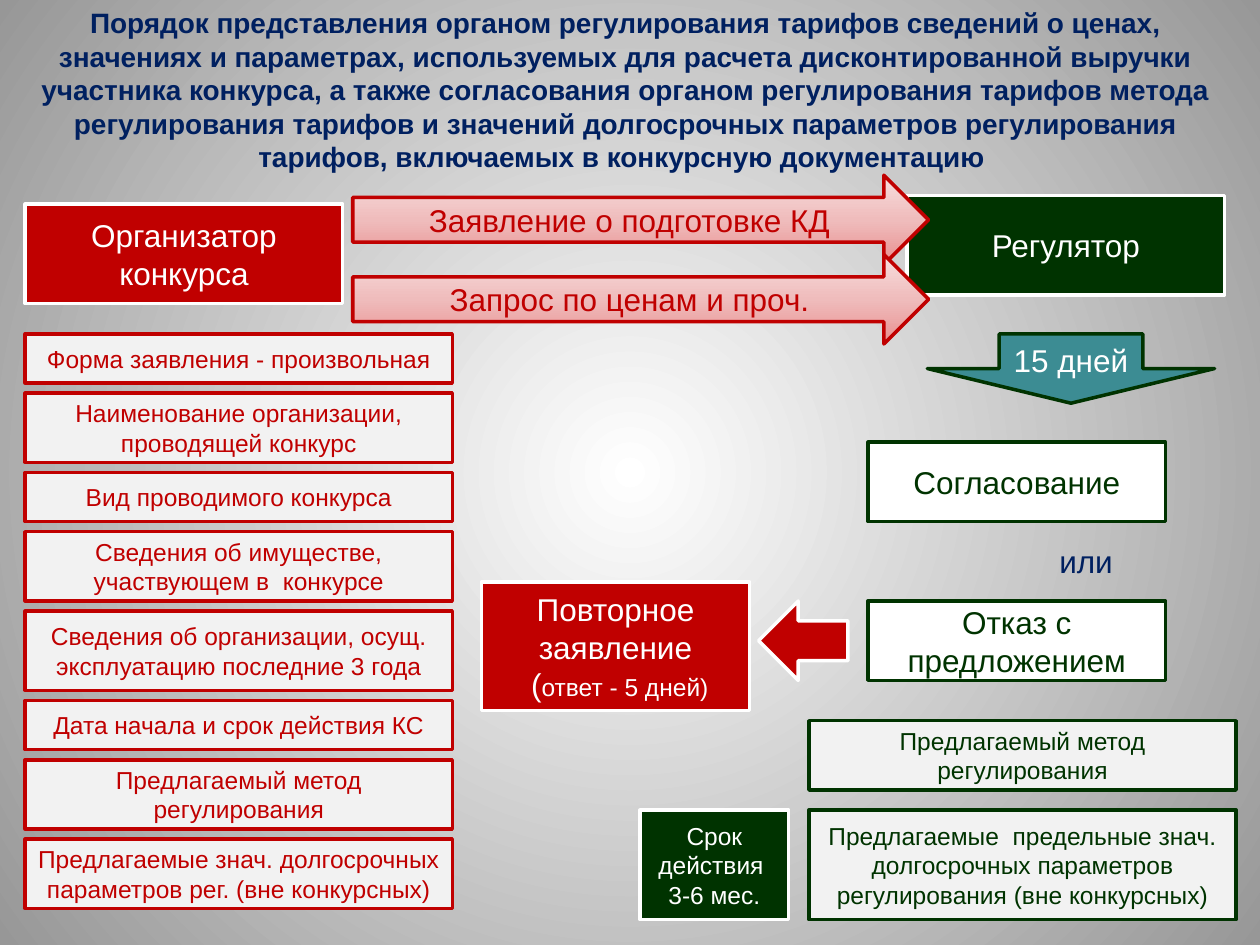
from copy import deepcopy

from lxml import etree
from pptx import Presentation
from pptx.dml.color import RGBColor
from pptx.enum.shapes import MSO_SHAPE
from pptx.enum.text import MSO_ANCHOR, PP_ALIGN
from pptx.oxml.ns import qn
from pptx.util import Emu, Pt

RECTANGLE = MSO_SHAPE.RECTANGLE
RIGHT_ARROW = MSO_SHAPE.RIGHT_ARROW
LEFT_ARROW_ROTATION = 180
DOWN_ARROW = MSO_SHAPE.DOWN_ARROW
CENTER = PP_ALIGN.CENTER
MIDDLE = MSO_ANCHOR.MIDDLE

EMU_PER_PX = 9144
COLORS = {
    "red": "C00000",
    "green": "003300",
    "navy": "002060",
    "teal": "3C8C93",
    "white": "FFFFFF",
    "pale": "F2F2F2",
    "gray": "979797",
    "rose_dark": "E98F8F",
    "rose": "EFBCBC",
    "rose_light": "F7DEDE",
}
ORGANIZER_STYLE = {"fill": "red", "line": "white", "color": "white"}
REGULATOR_STYLE = {"fill": "green", "line": "white", "color": "white"}
DECISION_STYLE = {"fill": "white", "line": "green", "color": "green"}
REQUEST_STYLE = {"fill": None, "line": "red", "color": "red"}
APPLICATION_STYLE = {"fill": "pale", "line": "red", "color": "red", "size": 14}
PROPOSAL_STYLE = {"fill": "pale", "line": "green", "color": "green", "size": 14}

TITLE = (
    "Порядок представления органом регулирования тарифов сведений о ценах, "
    "значениях и параметрах, используемых для расчета дисконтированной выручки "
    "участника конкурса, а также согласования органом регулирования тарифов метода "
    "регулирования тарифов и значений долгосрочных параметров регулирования "
    "тарифов, включаемых в конкурсную документацию "
)
APPLICATION_ITEMS = [
    ("Форма заявления - произвольная", 39),
    ("Наименование организации, проводящей конкурс", 55),
    ("Вид проводимого конкурса", 39),
    ("Сведения об имуществе, участвующем в  конкурсе", 55),
    ("Сведения об организации, осущ. эксплуатацию последние 3 года", 63),
    ("Дата начала и срок действия КС", 39),
    ("Предлагаемый метод регулирования", 55),
    ("Предлагаемые знач. долгосрочных параметров рег. (вне конкурсных)", 55),
]


def px(length):
    """Turn px into EMU."""
    return Emu(length * EMU_PER_PX)


def rgb(name):
    """Return the named colour."""
    return RGBColor.from_string(COLORS[name])


def add_run(paragraph, text, size=18, color="navy", bold=False):
    """Add one formatted run to a paragraph."""
    run = paragraph.add_run()
    run.text = text
    run.font.name = "Arial"
    run.font.size = Pt(size)
    run.font.bold = bold
    run.font.color.rgb = rgb(color)


def write_text(shape, text, **font):
    """Write centred text, one paragraph for each line."""
    frame = shape.text_frame
    frame.word_wrap = True
    frame.vertical_anchor = MIDDLE
    for index, line in enumerate(text.split("\n")):
        paragraph = frame.paragraphs[0] if index == 0 else frame.add_paragraph()
        paragraph.alignment = CENTER
        add_run(paragraph, line, **font)


def set_stops(fill, element, names):
    """Give a fill evenly spaced gradient stops and return its XML element."""
    fill.gradient()
    gradient = element.find(".//" + qn("a:gradFill"))
    stop_list = gradient.find(qn("a:gsLst"))
    while len(stop_list) < len(names):
        stop_list.append(deepcopy(stop_list[-1]))
    for index, (stop, name) in enumerate(zip(fill.gradient_stops, names)):
        stop.position = index / (len(names) - 1)
        stop.color.rgb = rgb(name)
    return gradient


def add_box(slide, box, text="", kind=RECTANGLE, fill="white", line="white",
            color="white", size=18):
    """Add an outlined shape, with a rose gradient if no fill is named."""
    shape = slide.shapes.add_shape(kind, *map(px, box))
    shape.shadow.inherit = False
    shape.line.color.rgb = rgb(line)
    shape.line.width = Pt(2)
    if fill:
        shape.fill.solid()
        shape.fill.fore_color.rgb = rgb(fill)
    else:
        set_stops(shape.fill, shape._element, ["rose_dark", "rose", "rose_light"])
        shape.fill.gradient_angle = 90
    if text:
        write_text(shape, text, color=color, size=size)
    return shape


def add_label(slide, box, text, **font):
    """Add a text box."""
    write_text(slide.shapes.add_textbox(*map(px, box)), text, **font)


def paint_background(slide):
    """Fill the background with a circular gradient."""
    gradient = set_stops(slide.background.fill, slide._element, ["white", "gray"])
    gradient.remove(gradient.find(qn("a:lin")))
    circle = etree.SubElement(gradient, qn("a:path"), {"path": "circle"})
    sides = dict.fromkeys("ltrb", "50000")
    etree.SubElement(circle, qn("a:fillToRect"), sides)


def add_parties(slide, left, top, width):
    """Place the organizer, the regulator and the requests between them."""
    add_box(slide, (left, top + 23, 252, 79), "Организатор конкурса", **ORGANIZER_STYLE)
    add_box(slide, (left + width - 252, top + 16, 252, 79), "Регулятор", **REGULATOR_STYLE)
    for index, text in enumerate(["Заявление о подготовке КД", "Запрос по ценам и проч."]):
        box = (left + 260, top + index * 63, 457, 71)
        add_box(slide, box, text, RIGHT_ARROW, **REQUEST_STYLE)


def add_application(slide, left, top, width, gap=8):
    """Stack the contents of the application."""
    for text, height in APPLICATION_ITEMS:
        add_box(slide, (left, top, width, height), text, **APPLICATION_STYLE)
        top += height + gap


def add_decision(slide, left, top, width):
    """Place the regulator's term and its two possible answers."""
    add_box(slide, (left + 47, top, 228, 55), "15 дней", DOWN_ARROW,
            fill="teal", line="green")
    add_box(slide, (left, top + 86, width, 63), "Согласование", **DECISION_STYLE)
    add_label(slide, (left + 118, top + 165, 110, 31), "или")
    add_box(slide, (left, top + 212, width, 63), "Отказ с предложением", **DECISION_STYLE)


def add_resubmission(slide, left, top, width, height):
    """Place the repeated application and the arrow leading to it."""
    box = (left, top, width, height)
    shape = add_box(slide, box, "Повторное заявление\n (", **ORGANIZER_STYLE)
    add_run(shape.text_frame.paragraphs[1], "ответ - 5 дней)", size=14, color="white")
    arrow = add_box(slide, (left + width + 7, top + 15, 71, 63), kind=RIGHT_ARROW, fill="red")
    arrow.rotation = LEFT_ARROW_ROTATION


def add_proposal(slide, left, top, width):
    """Place the proposed method, the limit values and their validity."""
    main_left = left + width - 339
    add_box(slide, (main_left, top, 339, 55),
            "Предлагаемый метод регулирования", **PROPOSAL_STYLE)
    add_box(slide, (main_left, top + 71, 339, 87),
            "Предлагаемые  предельные знач. долгосрочных параметров "
            "регулирования (вне конкурсных)", **PROPOSAL_STYLE)
    add_box(slide, (left, top + 71, 118, 87), "Срок действия \n3-6 мес.",
            size=14, **REGULATOR_STYLE)


def main():
    """Build and save the slide."""
    presentation = Presentation()
    presentation.slide_width, presentation.slide_height = px(1000), px(750)
    slide = presentation.slides.add_slide(presentation.slide_layouts[6])
    paint_background(slide)
    add_label(slide, (20, 0, 953, 142), TITLE, size=16, bold=True)
    add_parties(slide, 20, 139, 952)
    add_application(slide, 20, 265, 339)
    add_decision(slide, 689, 265, 236)
    add_resubmission(slide, 382, 462, 213, 102)
    add_proposal(slide, 508, 572, 473)
    presentation.save("out.pptx")


if __name__ == "__main__":
    main()
